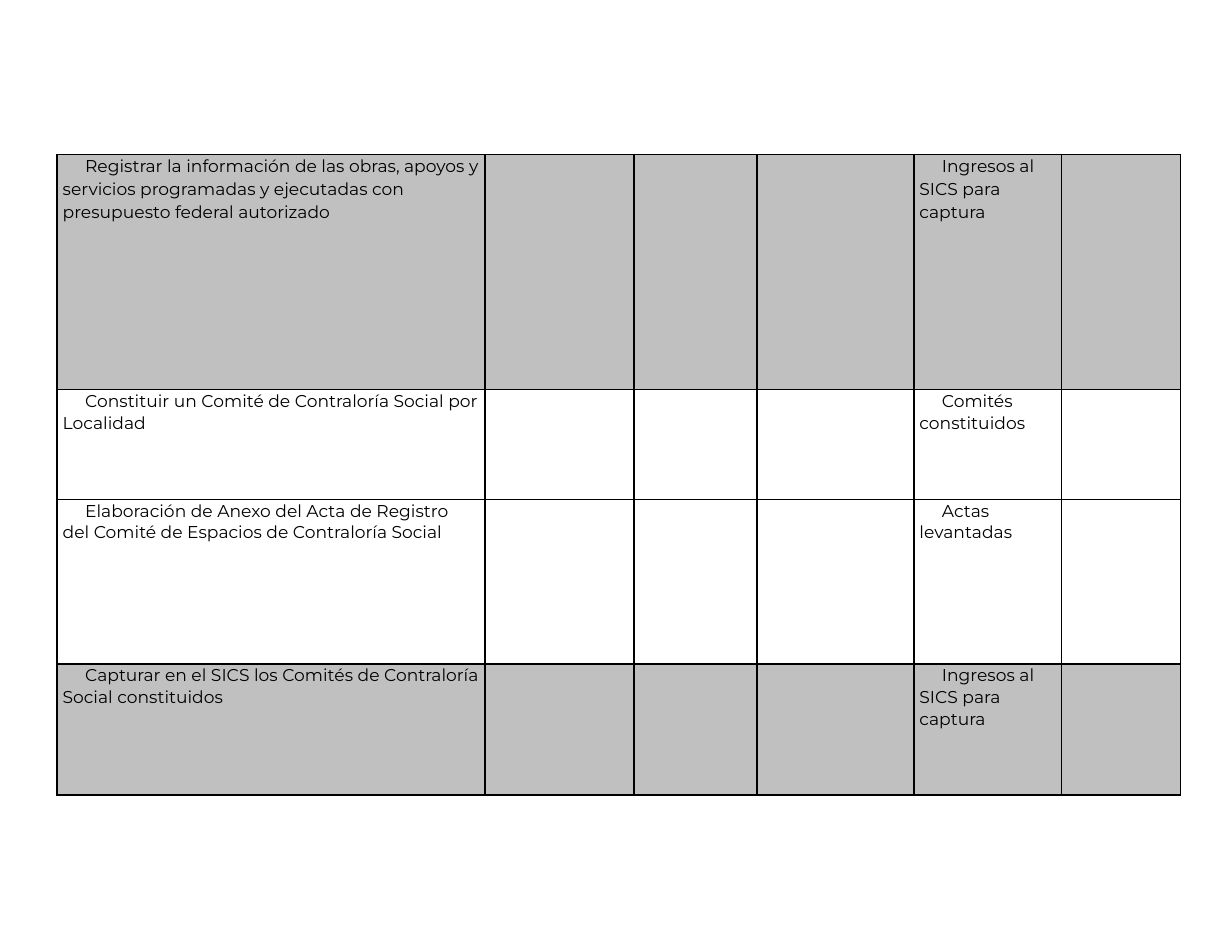
from lxml.etree import SubElement
from pptx import Presentation
from pptx.dml.color import RGBColor
from pptx.oxml.ns import qn
from pptx.util import Inches, Pt

COLS = [3.82, 1.33, 1.1, 1.4, 1.32, 1.06]
HEIGHTS = [2.1, 0.98, 1.47, 1.17]
UNIT_COL = 4
GREY = "C0C0C0"
BLACK = "000000"
ACTIVITIES = [
    ("Registrar la información de las obras, apoyos y servicios programadas "
     "y ejecutadas con presupuesto federal autorizado",
     "Ingresos al SICS para captura", GREY, 14.5),
    ("Constituir un Comité de Contraloría Social por Localidad",
     "Comités constituidos", None, 14),
    ("Elaboración de Anexo del Acta de Registro del Comité de Espacios "
     "de Contraloría Social",
     "Actas levantadas", None, 14),
    ("Capturar en el SICS los Comités de Contraloría Social constituidos",
     "Ingresos al SICS para captura", GREY, 14),
]


def rgb(value):
    return RGBColor.from_string(value)


def set_text(tf, text, size=11, font="Montserrat", color=BLACK,
             spacing=14, after=5, indent=0.2):
    p = tf.paragraphs[0]
    p.line_spacing = Pt(spacing)
    p.space_after = Pt(after)
    pPr = p._p.get_or_add_pPr()
    pPr.set("marL", "0")
    pPr.set("indent", str(Inches(indent)))
    r = p.add_run()
    r.text = text
    r.font.size = Pt(size)
    r.font.name = font
    r.font.color.rgb = rgb(color)


def set_borders(cell, color=BLACK, width=1):
    tcPr = cell._tc.get_or_add_tcPr()
    for side in ("lnL", "lnR", "lnT", "lnB"):
        ln = SubElement(tcPr, qn(f"a:{side}"), w=str(Pt(width)))
        fill = SubElement(ln, qn("a:solidFill"))
        SubElement(fill, qn("a:srgbClr"), val=color)


def format_cell(cell, fill):
    cell.margin_left = cell.margin_right = Inches(0.05)
    cell.margin_top = cell.margin_bottom = 0
    set_borders(cell)
    if fill:
        cell.fill.solid()
        cell.fill.fore_color.rgb = rgb(fill)
    else:
        cell.fill.background()


def add_activity_table(s, left, top):
    table = s.shapes.add_table(
        len(HEIGHTS), len(COLS), Inches(left), Inches(top),
        Inches(sum(COLS)), Inches(sum(HEIGHTS))).table
    table.first_row = False
    table.horz_banding = False
    for col, width in zip(table.columns, COLS):
        col.width = Inches(width)
    for row, height, activity in zip(table.rows, HEIGHTS, ACTIVITIES):
        task, unit, fill, spacing = activity
        row.height = Inches(height)
        for cell in row.cells:
            format_cell(cell, fill)
        set_text(row.cells[0].text_frame, task, spacing=spacing)
        set_text(row.cells[UNIT_COL].text_frame, unit, spacing=spacing)


def main():
    prs = Presentation()
    prs.slide_width = Inches(11)
    prs.slide_height = Inches(8.5)
    s = prs.slides.add_slide(prs.slide_layouts[6])
    add_activity_table(s, 0.51, 1.38)
    prs.save("out.pptx")


if __name__ == "__main__":
    main()
